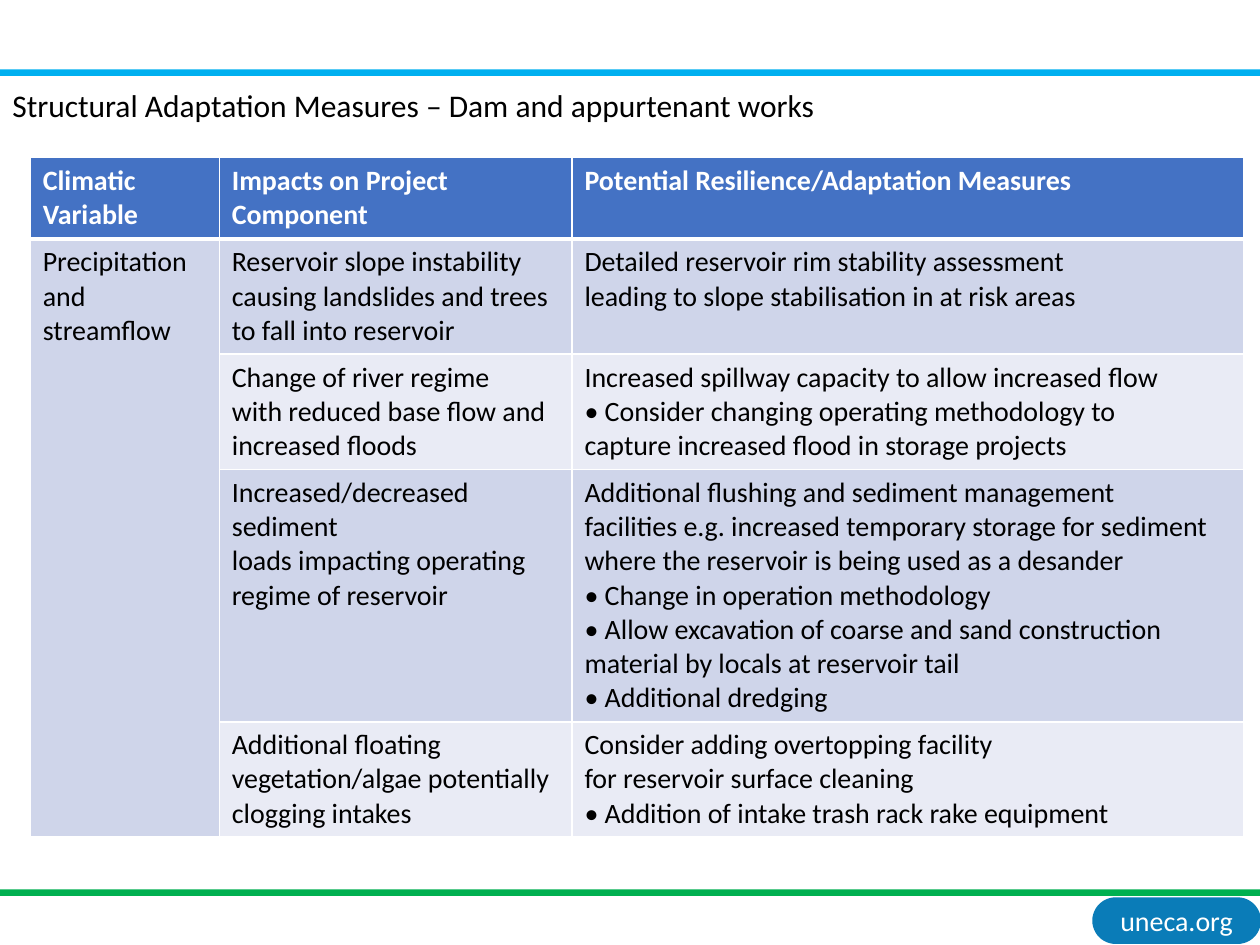
import pptx
import pptx.util
import pptx.dml.color
import pptx.enum.shapes
import pptx.enum.text
import pptx.oxml
import pptx.oxml.ns

Cm = pptx.util.Cm
FONT = "Calibri"
WHITE, BLACK = "FFFFFF", "000000"
HEAD, BANDS = "4472C4", ("CFD5EA", "E9EBF5")
COLS = (3.81, 7.11, 13.54)
ROWS = (1.6, 2.29, 2.29, 5, 2.29)
TITLES = (
    "Climatic Variable",
    "Impacts on Project Component",
    "Potential Resilience/Adaptation Measures",
)
CAUSE = "Precipitation and streamflow"
ITEMS = (
    (
        ("Reservoir slope instability",
         "causing landslides and trees to fall into reservoir"),
        ("Detailed reservoir rim stability assessment",
         "leading to slope stabilisation in at risk areas"),
    ),
    (
        ("Change of river regime",
         "with reduced base flow and",
         "increased floods"),
        ("Increased spillway capacity to allow increased flow",
         "• Consider changing operating methodology to",
         "capture increased flood in storage projects"),
    ),
    (
        ("Increased/decreased sediment",
         "loads impacting operating",
         "regime of reservoir"),
        ("Additional flushing and sediment management",
         "facilities e.g. increased temporary storage for sediment "
         "where the reservoir is being used as a desander",
         "• Change in operation methodology",
         "• Allow excavation of coarse and sand construction "
         "material by locals at reservoir tail",
         "• Additional dredging"),
    ),
    (
        ("Additional floating vegetation/algae potentially clogging intakes",),
        ("Consider adding overtopping facility",
         "for reservoir surface cleaning",
         "• Addition of intake trash rack rake equipment"),
    ),
)


def paint(code):
    """Turn a hex string into a colour."""
    return pptx.dml.color.RGBColor.from_string(code)


def write(frame, lines, size=16, color=BLACK, bold=False, align="LEFT"):
    """Write one paragraph for each line in a text frame."""
    frame.text = "\n".join(lines)
    for para in frame.paragraphs:
        para.alignment = getattr(pptx.enum.text.PP_ALIGN, align)
        for run in para.runs:
            run.font.name = FONT
            run.font.size = pptx.util.Pt(size)
            run.font.bold = bold
            run.font.color.rgb = paint(color)


def block(slide, kind, box, color):
    """Add a plain filled shape in a box."""
    form = getattr(pptx.enum.shapes.MSO_SHAPE, kind)
    shape = slide.shapes.add_shape(form, *map(Cm, box))
    shape.shadow.inherit = False
    shape.fill.solid()
    shape.fill.fore_color.rgb = paint(color)
    shape.line.fill.background()
    return shape


def edge(cell, side, width):
    """Draw a white border on one side of a cell."""
    space = pptx.oxml.ns.nsdecls("a")
    line = pptx.oxml.parse_xml(
        f'<a:ln{side} {space} w="{pptx.util.Pt(width)}"><a:solidFill>'
        f'<a:srgbClr val="{WHITE}"/></a:solidFill></a:ln{side}>'
    )
    cell._tc.get_or_add_tcPr().append(line)


def dress(cell, color, top=1, base=1):
    """Give a cell its borders and fill."""
    for side, width in zip("LRTB", (1, 1, top, base)):
        edge(cell, side, width)
    cell.fill.solid()
    cell.fill.fore_color.rgb = paint(color)


def frame(slide, box):
    """Place the bars and the address tab at the slide's edges."""
    left, top, width, height = box
    tab = block(slide, "ROUNDED_RECTANGLE",
                (left + width - 3.38, top + height - 0.96, 3.4, 0.94), "0A7CB8")
    tab.adjustments[0] = 0.5
    text = tab.text_frame
    text.margin_left = text.margin_right = Cm(0.13)
    text.margin_top = text.margin_bottom = Cm(0.13)
    text.vertical_anchor = pptx.enum.text.MSO_ANCHOR.MIDDLE
    write(text, ["uneca.org"], color=WHITE, align="CENTER")
    for drop, color in ((1.4, "00B0F0"), (17.93, "00B050")):
        block(slide, "RECTANGLE", (left, top + drop, width, 0.13), color)


def title(slide, box):
    """Place the slide title."""
    text = slide.shapes.add_textbox(*map(Cm, box)).text_frame
    text.word_wrap = False
    write(text, ["Structural Adaptation Measures – Dam and appurtenant works"],
          size=18)


def grid(slide, box):
    """Place the table of impacts and measures."""
    table = slide.shapes.add_table(len(ROWS), len(COLS), *map(Cm, box)).table
    for col, width in zip(table.columns, COLS):
        col.width = Cm(width)
    for row, height in zip(table.rows, ROWS):
        row.height = Cm(height)
    for col, name in enumerate(TITLES):
        cell = table.cell(0, col)
        dress(cell, HEAD, base=3)
        write(cell.text_frame, [name], color=WHITE, bold=True)
    for row, pair in enumerate(ITEMS, 1):
        top = 3 if row == 1 else 1
        band = BANDS[(row - 1) % 2]
        dress(table.cell(row, 0), BANDS[0], top)
        for col, lines in enumerate(pair, 1):
            cell = table.cell(row, col)
            dress(cell, band, top)
            write(cell.text_frame, lines)
    first = table.cell(1, 0)
    first.merge(table.cell(len(ITEMS), 0))
    write(first.text_frame, [CAUSE])


def main():
    """Build and save the slide."""
    deck = pptx.Presentation()
    deck.slide_width, deck.slide_height = Cm(25.4), Cm(19.05)
    slide = deck.slides.add_slide(deck.slide_layouts[6])
    frame(slide, (0, 0, 25.4, 19.05))
    grid(slide, (0.61, 3.18, sum(COLS), sum(ROWS)))
    title(slide, (0, 1.61, 16.86, 1.03))
    deck.save("out.pptx")


if __name__ == "__main__":
    main()
